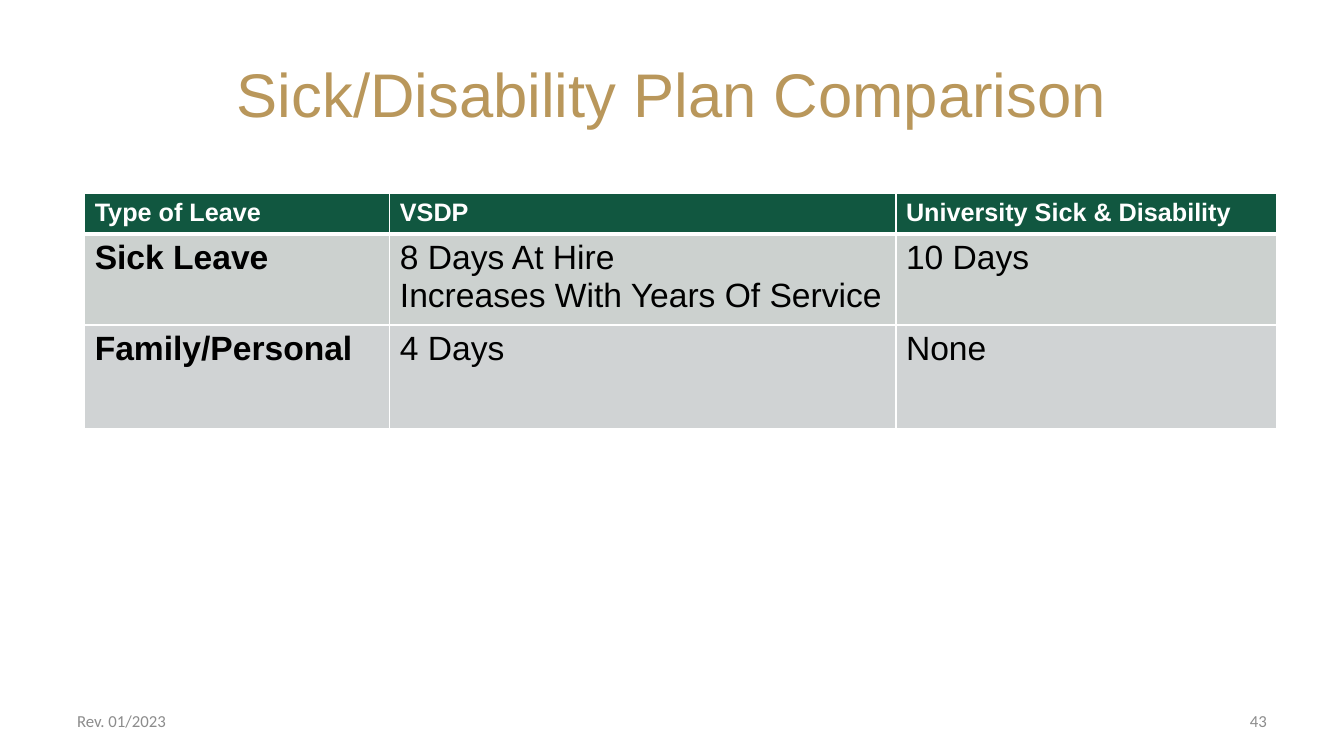
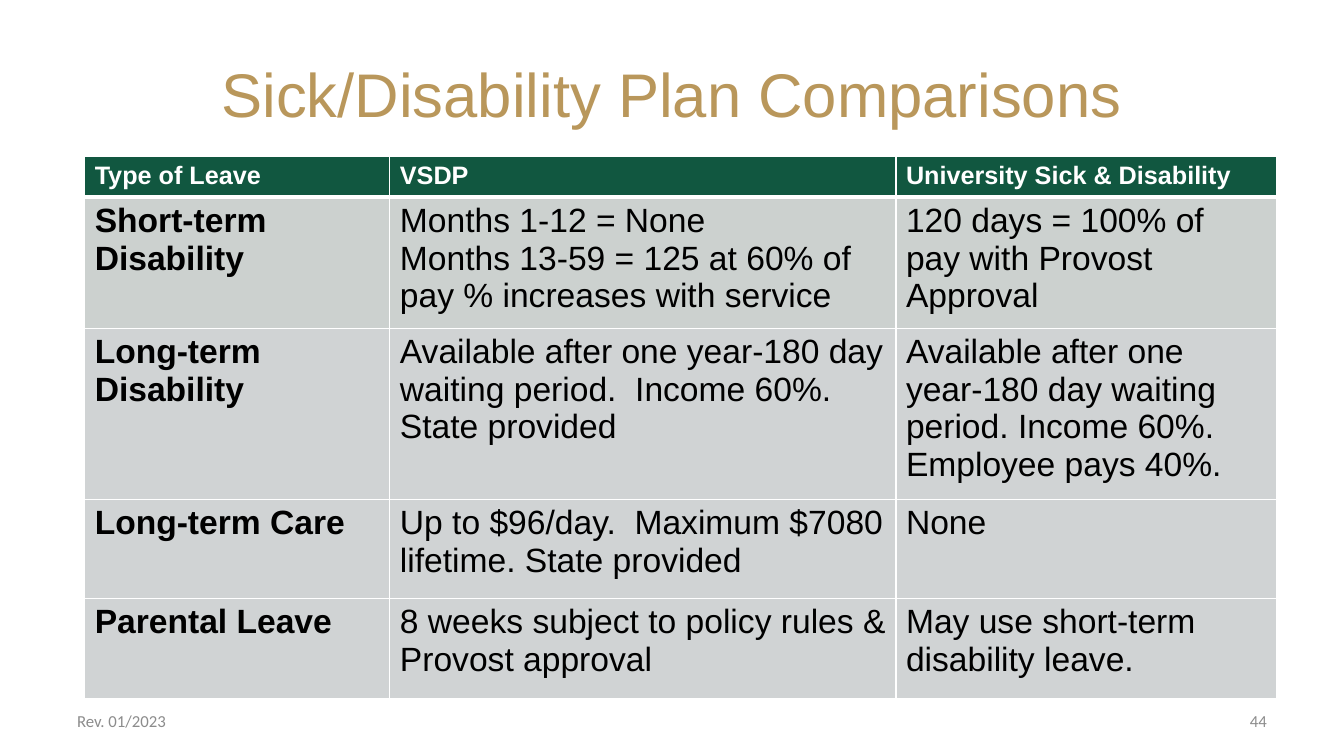
from lxml.etree import SubElement
from pptx import Presentation
from pptx.dml.color import RGBColor
from pptx.enum.text import MSO_ANCHOR as Anchor, PP_ALIGN as Align
from pptx.oxml.ns import qn
from pptx.util import Pt

COLORS = {
    "gold": "B9975B", "green": "115740", "white": "FFFFFF", "black": "000000",
    "sage": "CCD1CF", "silver": "D0D3D4", "footer": "8C8C8C",
}
SLIDE_W, SLIDE_H = 960, 540
MARGIN = 48
TABLE_LEFT = 60.5
COLUMN_WIDTHS = (218, 361.5, 272)
HEADER = ("Type of Leave", "VSDP", "University Sick & Disability")
HEADER_H = 27.5
THIN, THICK = 1, 3


def rgb(name):
    return RGBColor.from_string(COLORS[name])


def add_run(paragraph, text, size, color, face="Arial", bold=False):
    run = paragraph.add_run()
    run.text = text
    run.font.name, run.font.size, run.font.bold = face, Pt(size), bold
    run.font.color.rgb = rgb(color)


def add_label(slide, box, text, size, color, face, align):
    frame = slide.shapes.add_textbox(*map(Pt, box)).text_frame
    frame.word_wrap = True
    frame.vertical_anchor = Anchor.MIDDLE
    frame.paragraphs[0].alignment = align
    add_run(frame.paragraphs[0], text, size, color, face)


def add_borders(cell, top, bottom):
    """White rules on all four sides; must precede the cell's fill."""
    props = cell._tc.get_or_add_tcPr()
    for side, width in (("L", THIN), ("R", THIN), ("T", top), ("B", bottom)):
        line = SubElement(props, qn(f"a:ln{side}"), w=str(Pt(width)))
        fill = SubElement(line, qn("a:solidFill"))
        SubElement(fill, qn("a:srgbClr"), val=COLORS["white"])


def fill_cell(cell, text, size, color, bold, background, top, bottom):
    add_borders(cell, top, bottom)
    cell.fill.solid()
    cell.fill.fore_color.rgb = rgb(background)
    frame = cell.text_frame
    for i, line in enumerate(text.split("\n")):
        paragraph = frame.add_paragraph() if i else frame.paragraphs[0]
        add_run(paragraph, line, size, color, bold=bold)


def add_plan_table(slide, top, rows, header=True):
    """Rows are (height, background, texts); without a header the last rule is thick."""
    if header:
        rows = [(HEADER_H, "green", HEADER)] + rows
    heights = [height for height, _, _ in rows]
    table = slide.shapes.add_table(
        len(rows), len(COLUMN_WIDTHS), Pt(TABLE_LEFT), Pt(top),
        Pt(sum(COLUMN_WIDTHS)), Pt(sum(heights))).table
    table.first_row, table.horz_banding = header, False
    for column, width in zip(table.columns, COLUMN_WIDTHS):
        column.width = Pt(width)
    for r, (height, background, texts) in enumerate(rows):
        table.rows[r].height = Pt(height)
        is_header = header and r == 0
        upper = THICK if header and r == 1 else THIN
        lower = THICK if is_header or not header else THIN
        size, color = (18, "white") if is_header else (24, "black")
        for c, text in enumerate(texts):
            fill_cell(table.cell(r, c), text, size, color, is_header or c == 0,
                      background, upper, lower)


def add_plan_slide(prs, title, number, tables):
    slide = prs.slides.add_slide(prs.slide_layouts[6])
    # Title
    add_label(slide, (MARGIN, 21.5, SLIDE_W - 2 * MARGIN, 90), title,
              44, "gold", "Arial", Align.CENTER)
    # Comparison tables
    for top, rows, header in tables:
        add_plan_table(slide, top, rows, header)
    # Footer: revision and page number
    width, footer_top = 224, 500.5
    for left, text, align in ((MARGIN, "Rev. 01/2023", Align.LEFT),
                              (SLIDE_W - MARGIN - width, number, Align.RIGHT)):
        add_label(slide, (left, footer_top, width, 28.8), text,
                  12, "footer", "Calibri", align)


LEAVE_ROWS = [
    (60.5, "sage", ("Sick Leave",
                    "8 Days At Hire\nIncreases With Years Of Service",
                    "10 Days")),
    (74, "silver", ("Family/Personal", "4 Days", "None")),
]
DISABILITY_ROWS = [
    (92, "sage", ("Short-term Disability",
                  "Months 1-12 = None\n"
                  "Months 13-59 = 125 at 60% of pay % increases with service",
                  "120 days = 100% of pay with Provost Approval")),
    (121, "silver", ("Long-term Disability",
                     "Available after one year-180 day waiting period.  "
                     "Income 60%. State provided",
                     "Available after one year-180 day waiting period. "
                     "Income 60%. Employee pays 40%.")),
]
CARE_ROWS = [
    (72.5, "silver", ("Long-term Care",
                      "Up to $96/day.  Maximum $7080 lifetime. State provided",
                      "None")),
]
PARENTAL_ROWS = [
    (72.5, "silver", ("Parental Leave",
                      "8 weeks subject to policy rules & Provost approval",
                      "May use short-term disability leave.")),
]


def main():
    prs = Presentation()
    prs.slide_width, prs.slide_height = Pt(SLIDE_W), Pt(SLIDE_H)
    add_plan_slide(prs, "Sick/Disability Plan Comparison", "43",
                   [(138.5, LEAVE_ROWS, True)])
    add_plan_slide(prs, "Sick/Disability Plan Comparisons", "44",
                   [(112, DISABILITY_ROWS, True),
                    (356.5, CARE_ROWS, False),
                    (427.5, PARENTAL_ROWS, False)])
    prs.save("out.pptx")


if __name__ == "__main__":
    main()
